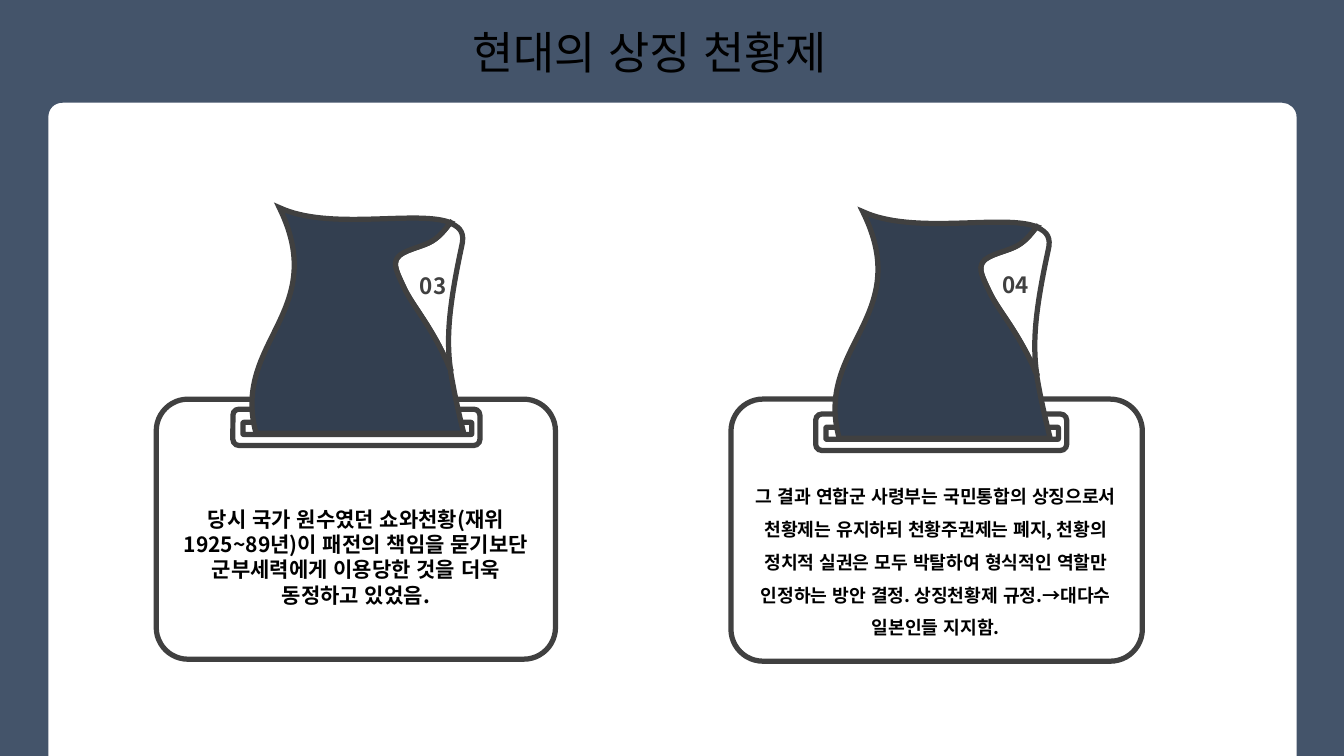
import pptx
import pptx.dml.color
import pptx.enum.lang
import pptx.enum.shapes
import pptx.enum.text
import pptx.oxml
import pptx.oxml.ns
import pptx.util
from dataclasses import dataclass

Inches = pptx.util.Inches
ROUND_RECT = pptx.enum.shapes.MSO_SHAPE.ROUNDED_RECTANGLE
NAMESPACE = pptx.oxml.ns.nsdecls("a")


@dataclass(frozen=True)
class Theme:
    font: str = "Noto Sans CJK KR"
    backdrop: str = "44546A"
    paper: str = "FFFFFF"
    page: str = "333F50"
    ink: str = "404040"
    text: str = "000000"
    outline: float = 3.75
    title_size: int = 32
    number_size: int = 16
    body_sizes: tuple = (15, 13)


theme = Theme()


def draw_outline(shapes, frame, start, segments, origin=(0, 0), offset=(0, 0), scale=(1, 1)):
    """Closed outline of lines (x, y) and Bezier curves (x1, y1, x2, y2, x, y)."""
    left, top, width, height = frame
    x0 = Inches(offset[0] + (left - origin[0]) * scale[0])
    y0 = Inches(offset[1] + (top - origin[1]) * scale[1])
    x1, y1 = x0 + Inches(width * scale[0]), y0 + Inches(height * scale[1])
    builder = shapes.build_freeform(x0, y0)
    builder.add_line_segments([(x1, y0), (x1, y1), (x0, y1)], close=True)
    shape = builder.convert_to_shape()
    contour = shape._element.xpath(".//a:path")[0]
    for corner in list(contour):
        contour.remove(corner)
    for index, segment in enumerate([start] + segments):
        tag = "moveTo" if index == 0 else "lnTo" if len(segment) == 2 else "cubicBezTo"
        points = "".join(
            f'<a:pt x="{Inches((x - left) * scale[0])}" y="{Inches((y - top) * scale[1])}"/>'
            for x, y in zip(segment[::2], segment[1::2]))
        contour.append(pptx.oxml.parse_xml(f"<a:{tag} {NAMESPACE}>{points}</a:{tag}>"))
    contour.append(pptx.oxml.parse_xml(f"<a:close {NAMESPACE}/>"))
    return shape


def paint(shape, fill, outlined=True):
    shape.shadow.inherit = False
    shape.fill.solid()
    shape.fill.fore_color.rgb = pptx.dml.color.RGBColor.from_string(fill)
    if outlined:
        shape.line.color.rgb = pptx.dml.color.RGBColor.from_string(theme.ink)
        shape.line.width = pptx.util.Pt(theme.outline)
        shape.line._get_or_add_ln().append(
            pptx.oxml.parse_xml(f'<a:miter {NAMESPACE} lim="800000"/>'))
    else:
        shape.line.fill.background()


deck = pptx.Presentation()
deck.slide_width, deck.slide_height = Inches(13.33), Inches(7.5)
slide = deck.slides.add_slide(deck.slide_layouts[6])
shapes = slide.shapes

# Backdrop around the white panel
backdrop = draw_outline(shapes, (0, 0, 13.33, 7.5), (0, 0), [
    (13.33, 0), (13.33, 7.5), (12.86, 7.5), (12.86, 1.47), (12.86, 1.16),
    (12.86, 1.08, 12.79, 1.02, 12.72, 1.02), (0.62, 1.02),
    (0.54, 1.02, 0.48, 1.08, 0.48, 1.16), (0.48, 1.47), (0.48, 7.5), (0, 7.5)])
paint(backdrop, theme.backdrop, outlined=False)

# Turned page: the flap and the page share the fold
fold_start = (4.47, 2.21)
fold = [
    (4.46, 2.22), (4.42, 2.27, 4.37, 2.34, 4.29, 2.39),
    (4.2, 2.45, 3.99, 2.48, 3.94, 2.56), (3.9, 2.63, 3.93, 2.69, 4.01, 2.86),
    (4.09, 3.03, 4.25, 3.2, 4.42, 3.56), (4.44, 3.6, 4.45, 3.64, 4.47, 3.67),
    (4.47, 3.68)]
flap_edge = [(4.46, 3.6), (4.43, 3.31, 4.46, 3, 4.58, 2.44),
             (4.61, 2.32, 4.57, 2.26, 4.48, 2.22)]
page_top = [(3.26, 2.29, 4.1, 2.09, 4.44, 2.2), fold_start]
page_bottom = [(4.47, 3.69), (4.5, 3.87, 4.54, 4.06, 4.6, 4.3), (2.54, 4.3),
               (2.29, 3.39, 3.28, 3.1, 2.77, 2.06)]
sheets = [
    ((3.92, 2.21, 0.67, 1.46), fold_start, fold + flap_edge, theme.paper),
    ((2.49, 2.06, 2.11, 2.24), (2.77, 2.06), page_top + fold + page_bottom, theme.page),
]

# Clipboards: board, clip corner, clip scale, number box
clip_origin = (2.31, 2.06)
clipboards = [
    ((1.55, 3.96, 3.96, 2.58), clip_origin, (1, 1), "03", (4.04, 2.52, 0.51, 0.45)),
    ((7.25, 3.96, 4.08, 2.6), (8.09, 2.1), (1.016, 1.004), "04", (9.79, 2.51, 0.57, 0.45)),
]
boards = []
wordings = []
for board_box, corner, scale, number, number_box in clipboards:
    board = shapes.add_shape(ROUND_RECT, *map(Inches, board_box))
    board.adjustments[0] = 0.122
    paint(board, theme.paper)
    boards.append(board)

    for x, y, width, height, rounding in ((0, 2, 2.45, 0.36, 0.167),
                                          (0.1, 2.13, 2.27, 0.12, 0.089)):
        clip = shapes.add_shape(
            ROUND_RECT, Inches(corner[0] + x * scale[0]), Inches(corner[1] + y * scale[1]),
            Inches(width * scale[0]), Inches(height * scale[1]))
        clip.adjustments[0] = rounding
        paint(clip, theme.paper)

    for frame, start, segments, fill in sheets:
        paint(draw_outline(shapes, frame, start, segments, clip_origin, corner, scale), fill)

    number_label = shapes.add_textbox(*map(Inches, number_box))
    wordings.append((number_label, number, theme.number_size, theme.ink, True, 1.5))

# Title and statements
title = shapes.add_textbox(Inches(3.46), Inches(0.2), Inches(5.97), Inches(0.64))
outcome = shapes.add_textbox(Inches(7.36), Inches(4.66), Inches(3.84), Inches(1.7))
boards[0].text_frame.margin_top = Inches(0.6)
boards[0].text_frame.vertical_anchor = pptx.enum.text.MSO_ANCHOR.MIDDLE
wordings += [
    (title, "현대의 상징 천황제", theme.title_size, theme.text, False, None),
    (boards[0], "당시 국가 원수였던 쇼와천황(재위 1925~89년)이 패전의 책임을 묻기보단 "
     "군부세력에게 이용당한 것을 더욱 동정하고 있었음.",
     theme.body_sizes[0], theme.text, True, None),
    (outcome, "그 결과 연합군 사령부는 국민통합의 상징으로서 천황제는 유지하되 "
     "천황주권제는 폐지, 천황의 정치적 실권은 모두 박탈하여 형식적인 역할만 "
     "인정하는 방안 결정. 상징천황제 규정.→대다수 일본인들 지지함.",
     theme.body_sizes[1], theme.text, True, 1.5),
]
for holder, wording, size, colour, bold, spacing in wordings:
    holder.text_frame.word_wrap = True
    if holder is not boards[0]:
        holder.text_frame.auto_size = pptx.enum.text.MSO_AUTO_SIZE.SHAPE_TO_FIT_TEXT
    paragraph = holder.text_frame.paragraphs[0]
    paragraph.alignment = pptx.enum.text.PP_ALIGN.CENTER
    paragraph.line_spacing = spacing
    run = paragraph.add_run()
    run.text = wording
    run.font.name = theme.font
    run.font.size = pptx.util.Pt(size)
    run.font.bold = bold
    run.font.language_id = pptx.enum.lang.MSO_LANGUAGE_ID.KOREAN
    run.font.color.rgb = pptx.dml.color.RGBColor.from_string(colour)
    # Hangul takes its typeface from the East Asian slot
    run.font._element.append(pptx.oxml.parse_xml(
        f'<a:ea {NAMESPACE} typeface="{theme.font}"/>'))

deck.save("out.pptx")
